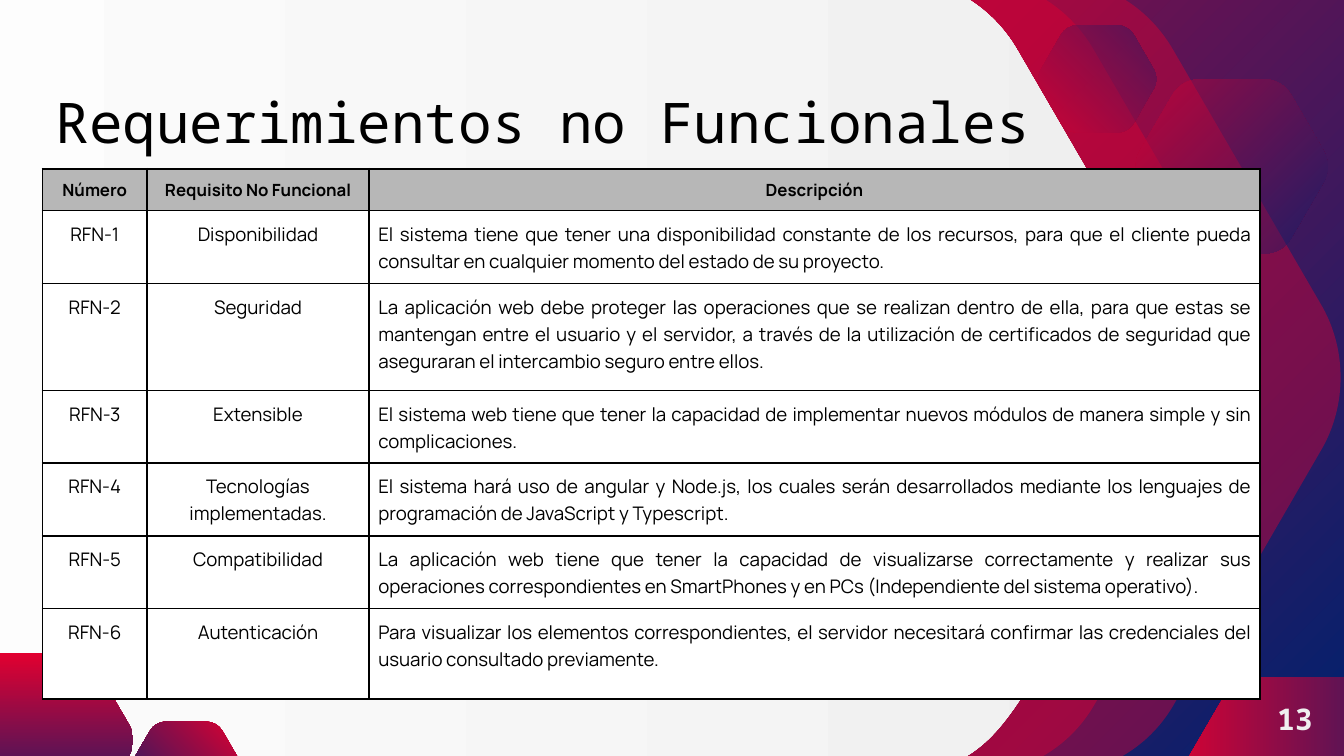
from lxml.etree import SubElement
from pptx import Presentation
from pptx.dml.color import RGBColor
from pptx.enum.text import MSO_ANCHOR, PP_ALIGN
from pptx.oxml import parse_xml
from pptx.oxml.ns import nsdecls, qn
from pptx.util import Cm, Pt

RED, NAVY, WHITE, PALE, BLACK, GRAY = "E20030", "00216E", "FFFFFF", "EFEFEF", "000000", "B7B7B7"
MONO, SANS = "Noto Sans Mono", "Manrope"
BIG_W, BIG_H = 16.79, 15.09

HEXAGON_START = (0.333, 0)
HEXAGON = [
    [(0.276, 0), (0.224, 0.034), (0.195, 0.09)],
    [(0.027, 0.412)],
    [(0, 0.466), (0, 0.534), (0.027, 0.588)],
    [(0.071, 0.667), (0.103, 0.731), (0.129, 0.783)],
    [(0.225, 0.976), (0.237, 1), (0.393, 1)],
    [(0.416, 1), (0.439, 1), (0.466, 0.999)],
    [(0.501, 0.998), (0.541, 0.998), (0.588, 0.998)],
    [(0.612, 0.998), (0.639, 0.998), (0.667, 0.998)],
    [(0.724, 0.998), (0.776, 0.966), (0.805, 0.911)],
    [(0.973, 0.588)],
    [(1, 0.534), (1, 0.466), (0.973, 0.412)],
    [(0.805, 0.09)],
    [(0.776, 0.034), (0.724, 0), (0.667, 0)],
]

HEADERS = ["Número", "Requisito No Funcional", "Descripción"]
REQUIREMENTS = [
    ("Disponibilidad", "El sistema tiene que tener una disponibilidad constante de los recursos, para que el cliente pueda consultar en cualquier momento del estado de su proyecto."),
    ("Seguridad", "La aplicación web debe proteger las operaciones que se realizan dentro de ella, para que estas se mantengan entre el usuario y el servidor, a través de la utilización de certificados de seguridad que aseguraran el intercambio seguro entre ellos."),
    ("Extensible", "El sistema web tiene que tener la capacidad de implementar nuevos módulos de manera simple y sin complicaciones."),
    ("Tecnologías implementadas.", "El sistema hará uso de angular y Node.js, los cuales serán desarrollados mediante los lenguajes de programación de JavaScript y Typescript."),
    ("Compatibilidad", "La aplicación web tiene que tener la capacidad de visualizarse correctamente y realizar sus operaciones correspondientes en SmartPhones y en PCs (Independiente del sistema operativo)."),
    ("Autenticación", "Para visualizar los elementos correspondientes, el servidor necesitará confirmar las credenciales del usuario consultado previamente."),
]
COL_WIDTHS = [1.98, 4.19, 16.84]
ROW_HEIGHTS = [0.79, 1.38, 2.02, 1.37, 1.38, 1.37, 1.71]


def rgb(color):
    return RGBColor.from_string(color)


def set_gradient(fill, colors, angle):
    fill.gradient()
    fill.gradient_angle = -angle % 360
    for stop, color in zip(fill.gradient_stops, colors):
        stop.color.rgb = rgb(color)


def round_corners(sp):
    lines = iter(list(sp._element.spPr.iter(qn("a:lnTo"))))
    for segment in HEXAGON:
        first, *others = [next(lines) for _ in segment]
        if others:
            first.tag = qn("a:cubicBezTo")
            for line in others:
                first.append(line[0])
                line.getparent().remove(line)


def add_hexagon(s, x, y, w, h, colors, angle=0, opacity=100, mirror=False, stretch=0):
    points = []
    for u, v in [HEXAGON_START] + [point for segment in HEXAGON for point in segment]:
        u = 1 - u if mirror else u
        points.append((Cm(x + u * w - (stretch if u < 0.5 else 0)), Cm(y + v * h)))
    builder = s.shapes.build_freeform(*points[0], scale=1.0)
    builder.add_line_segments(points[1:], close=True)
    sp = builder.convert_to_shape()
    round_corners(sp)
    sp.shadow.inherit = False
    sp.line.fill.background()
    if len(colors) == 1:
        sp.fill.solid()
        sp.fill.fore_color.rgb = rgb(colors[0])
    else:
        set_gradient(sp.fill, colors, angle)
    if opacity < 100:
        for color in sp._element.spPr.iter(qn("a:srgbClr")):
            SubElement(color, qn("a:alpha")).set("val", str(opacity * 1000))


def add_backdrop(s):
    set_gradient(s.background.fill, [RED, NAVY], 45)
    blend = [RED, NAVY]
    add_hexagon(s, 8.66, -0.41, BIG_W, BIG_H, [RED], opacity=41)
    add_hexagon(s, 7.16, -0.41, BIG_W, BIG_H, [RED], opacity=41)
    add_hexagon(s, 5.71, -0.41, BIG_W, BIG_H, [WHITE, PALE], mirror=True, stretch=10.59)
    add_hexagon(s, 21.87, 12.8, 6.1, 5.46, blend)
    add_hexagon(s, 21.44, 1.5, 3.68, 3.3, blend, 45, opacity=41)
    add_hexagon(s, 19.61, 0.48, 2.26, 2.03, blend, 315, opacity=42, mirror=True)
    add_hexagon(s, 21.08, 9.73, 1.85, 1.68, [NAVY, RED], 90, opacity=22)
    add_hexagon(s, -1.14, 12.34, 3.68, 3.3, blend, 90)
    add_hexagon(s, 2.39, 13.64, 2.26, 2.03, blend, 135, mirror=True)


def add_label(s, x, y, w, h, text, size, color, bold=False, align=PP_ALIGN.LEFT):
    tf = s.shapes.add_textbox(Cm(x), Cm(y), Cm(w), Cm(h)).text_frame
    tf.word_wrap = True
    tf.vertical_anchor = MSO_ANCHOR.MIDDLE
    tf.margin_left = tf.margin_right = tf.margin_top = tf.margin_bottom = Cm(0.25)
    p = tf.paragraphs[0]
    p.text = text
    p.alignment = align
    set_font(p, MONO, size, color, bold)


def set_font(p, name, size, color, bold):
    p.font.name, p.font.size, p.font.bold = name, Pt(size), bold
    p.font.color.rgb = rgb(color)


def set_borders(cell):
    tc_pr = cell._tc.get_or_add_tcPr()
    for i, side in enumerate("LRTB"):
        tc_pr.insert(i, parse_xml(
            f'<a:ln{side} {nsdecls("a")} w="{Pt(1)}"><a:solidFill>'
            f'<a:srgbClr val="{BLACK}"/></a:solidFill></a:ln{side}>'))


def fill_cell(cell, text, header, justified):
    cell.text = text
    cell.margin_left = cell.margin_right = cell.margin_top = cell.margin_bottom = Cm(0.18)
    cell.fill.solid()
    cell.fill.fore_color.rgb = rgb(GRAY if header else WHITE)
    set_borders(cell)
    p = cell.text_frame.paragraphs[0]
    p.alignment = PP_ALIGN.JUSTIFY if justified else PP_ALIGN.CENTER
    if not header:
        p.line_spacing = 1.07
    set_font(p, SANS, 9 if header else 10, BLACK, header)


def add_requirements_table(s, x, y):
    rows = [HEADERS] + [(f"RFN-{i}", *row) for i, row in enumerate(REQUIREMENTS, 1)]
    table = s.shapes.add_table(len(rows), len(HEADERS), Cm(x), Cm(y),
                               Cm(sum(COL_WIDTHS)), Cm(sum(ROW_HEIGHTS))).table
    for column, width in zip(table.columns, COL_WIDTHS):
        column.width = Cm(width)
    for r, (row, height) in enumerate(zip(rows, ROW_HEIGHTS)):
        table.rows[r].height = Cm(height)
        for c, text in enumerate(row):
            fill_cell(table.cell(r, c), text, header=r == 0, justified=r > 0 and c == 2)


def main():
    prs = Presentation()
    prs.slide_width, prs.slide_height = Cm(25.4), Cm(14.29)
    s = prs.slides.add_slide(prs.slide_layouts[6])
    add_backdrop(s)
    add_label(s, 0.8, 1.54, 21.44, 1.5, "Requerimientos no Funcionales", 30, BLACK)
    add_label(s, 23.55, 12.8, 1.85, 1.57, "13", 16, PALE, bold=True, align=PP_ALIGN.CENTER)
    add_requirements_table(s, 0.8, 3.19)
    prs.save("out.pptx")


if __name__ == "__main__":
    main()
